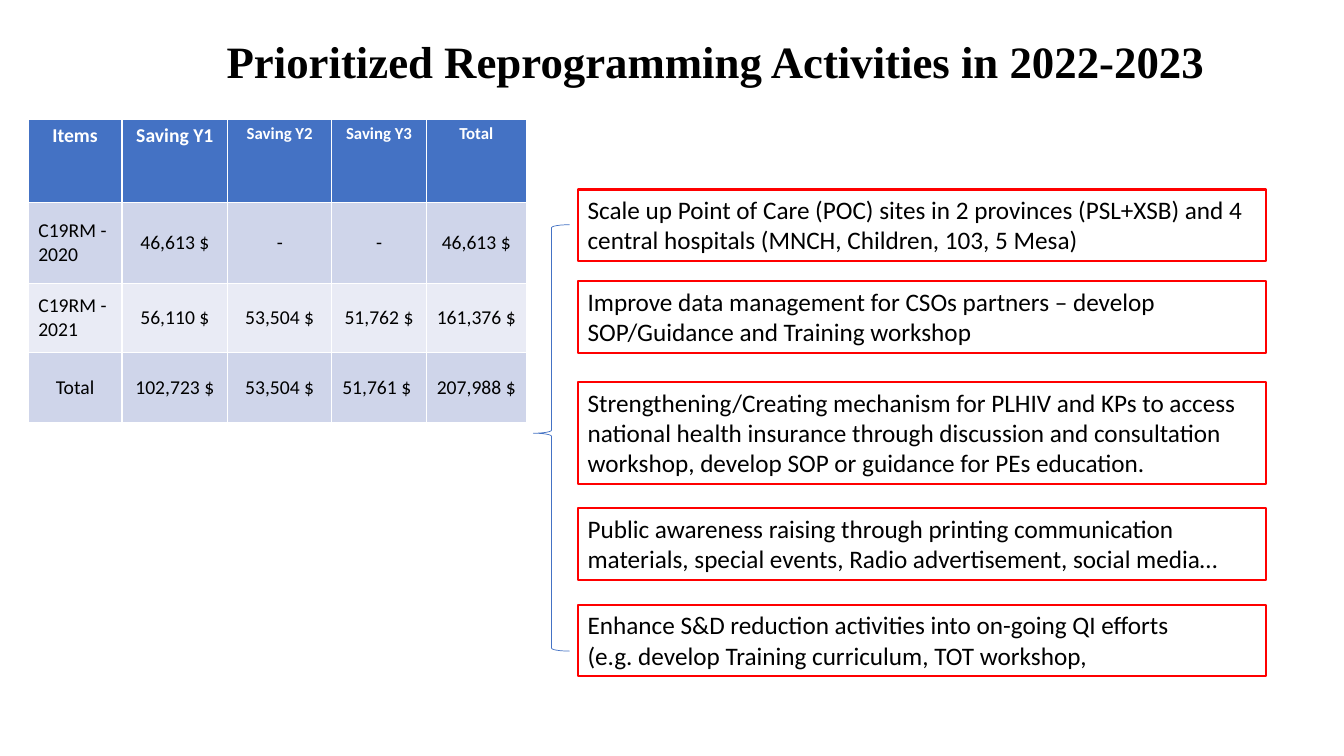
from pptx import Presentation
from pptx.dml.color import RGBColor
from pptx.enum.shapes import MSO_SHAPE
from pptx.enum.text import MSO_ANCHOR, PP_ALIGN
from pptx.util import Inches, Pt


def color(hex_value):
    return RGBColor.from_string(hex_value)


def set_font(paragraph, size, hex_value, bold=False, name="Calibri"):
    paragraph.font.name = name
    paragraph.font.size = Pt(size)
    paragraph.font.bold = bold
    paragraph.font.color.rgb = color(hex_value)


presentation = Presentation()
presentation.slide_width = Inches(13.33)
presentation.slide_height = Inches(7.5)
slide = presentation.slides.add_slide(presentation.slide_layouts[6])

title = slide.shapes.add_textbox(Inches(2.15), Inches(0.39), Inches(11.93), Inches(0.9))
title.text_frame.word_wrap = True
title.text_frame.margin_top = 0
paragraph = title.text_frame.paragraphs[0]
paragraph.text = "Prioritized Reprogramming Activities in 2022-2023"
paragraph.line_spacing = 0.9
set_font(paragraph, 32, "000000", True, "Times New Roman")

savings = [
    ["Items", "Saving Y1", "Saving Y2", "Saving Y3", "Total"],
    ["C19RM - 2020", "46,613 $", "-", "-", "46,613 $"],
    ["C19RM - 2021", "56,110 $", "53,504 $", "51,762 $", "161,376 $"],
    ["Total", "102,723 $", "53,504 $", "51,761 $ ", "207,988 $"],
]
column_widths = [0.93, 1.05, 1.03, 0.94, 0.99]
row_heights = [0.83, 0.8, 0.69, 0.69]
row_fills = ["4472C4", "CFD5EA", "E9EBF5", "CFD5EA"]

table = slide.shapes.add_table(
    len(savings), len(column_widths), Inches(0.28), Inches(1.18),
    Inches(sum(column_widths)), Inches(sum(row_heights))).table
for column, width in zip(table.columns, column_widths):
    column.width = Inches(width)
for row_index, values in enumerate(savings):
    table.rows[row_index].height = Inches(row_heights[row_index])
    header = row_index == 0
    for column_index, value in enumerate(values):
        cell = table.cell(row_index, column_index)
        cell.fill.solid()
        cell.fill.fore_color.rgb = color(row_fills[row_index])
        cell.vertical_anchor = MSO_ANCHOR.TOP if header else MSO_ANCHOR.MIDDLE
        paragraph = cell.text_frame.paragraphs[0]
        paragraph.text = value
        paragraph.alignment = PP_ALIGN.LEFT if value.startswith("C19RM") else PP_ALIGN.CENTER
        size = 12 if header and column_index > 1 else 14
        set_font(paragraph, size, "FFFFFF" if header else "000000", header)

brace = slide.shapes.add_shape(
    MSO_SHAPE.LEFT_BRACE, Inches(5.29), Inches(2.23), Inches(0.36), Inches(4.23))
brace.adjustments[0] = 0.083
brace.adjustments[1] = 0.489
brace.shadow.inherit = False
brace.fill.background()
brace.line.color.rgb = color("4472C4")
brace.line.width = Pt(0.5)

activities = [
    (1.88, 0.71, ["Scale up Point of Care (POC) sites in 2 provinces (PSL+XSB) and 4 "
                  "central hospitals (MNCH, Children, 103, 5 Mesa)"]),
    (2.79, 0.71, ["Improve data management for CSOs partners – develop "
                  "SOP/Guidance and Training workshop"]),
    (3.79, 1.01, ["Strengthening/Creating mechanism for PLHIV and KPs to access "
                  "national health insurance through discussion and consultation "
                  "workshop, develop SOP or guidance for PEs education."]),
    (5.04, 0.71, ["Public awareness raising through printing communication "
                  "materials, special events, Radio advertisement, social media…"]),
    (6, 0.71, ["Enhance S&D reduction activities into on-going QI efforts",
               "(e.g. develop Training curriculum, TOT workshop,"]),
]
for top, height, lines in activities:
    box = slide.shapes.add_shape(
        MSO_SHAPE.RECTANGLE, Inches(5.73), Inches(top), Inches(6.83), Inches(height))
    box.shadow.inherit = False
    box.fill.background()
    box.line.color.rgb = color("FF0000")
    box.line.width = Pt(1.5)
    frame = box.text_frame
    frame.word_wrap = True
    frame.vertical_anchor = MSO_ANCHOR.TOP
    frame.text = "\n".join(lines)
    for paragraph in frame.paragraphs:
        paragraph.alignment = PP_ALIGN.LEFT
        set_font(paragraph, 18, "000000")

presentation.save("out.pptx")
